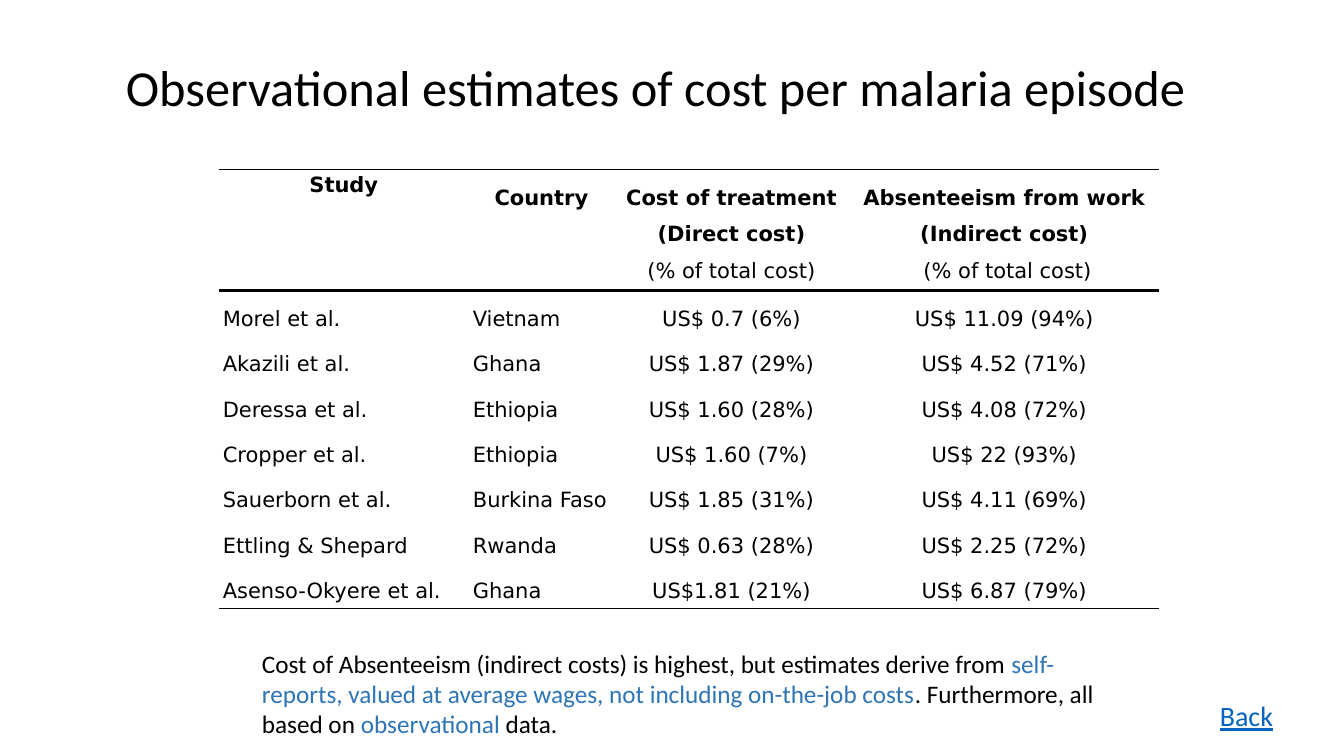
"""Build the slide on the cost of a malaria episode."""
from lxml.etree import SubElement
from pptx import Presentation
from pptx.dml.color import RGBColor
from pptx.enum.text import MSO_ANCHOR, MSO_AUTO_SIZE, PP_ALIGN
from pptx.oxml.ns import qn
from pptx.util import Inches, Pt

HUES = {"ink": "000000", "mark": "2E75B6", "link": "0563C1"}
HEAD = [
    ["Study"],
    ["Country"],
    ["Cost of treatment", "(Direct cost)", "(% of total cost)"],
    ["Absenteeism from work", "(Indirect cost)", " (% of total cost)"],
]
DATA = [
    ("Morel et al.", "Vietnam", "US$ 0.7 (6%)", "US$ 11.09 (94%)"),
    ("Akazili et al.", "Ghana", "US$ 1.87 (29%)", "US$ 4.52 (71%)"),
    ("Deressa et al.", "Ethiopia", "US$ 1.60 (28%)", "US$ 4.08 (72%)"),
    ("Cropper et al.", "Ethiopia", "US$ 1.60 (7%)", "US$ 22 (93%)"),
    ("Sauerborn et al.", "Burkina Faso", "US$ 1.85 (31%)", "US$ 4.11 (69%)"),
    ("Ettling & Shepard", "Rwanda", "US$ 0.63 (28%)", "US$ 2.25 (72%)"),
    ("Asenso-Okyere et al.", "Ghana", "US$1.81 (21%)", "US$ 6.87 (79%)"),
]
NOTE = [
    ("Cost of Absenteeism (indirect costs) is highest, but estimates derive from ", "ink"),
    ("self-reports, valued at average wages, not including on-the-job costs", "mark"),
    (". Furthermore, all based on ", "ink"),
    ("observational", "mark"),
    (" data.", "ink"),
]


class Deck:
    def __init__(self):
        self.show = Presentation()
        self.show.slide_width, self.show.slide_height = Inches(13.33), Inches(7.5)
        self.page = self.show.slides.add_slide(self.show.slide_layouts[5])

    def place(self, left, top, width, height):
        wide, high = self.show.slide_width, self.show.slide_height
        return [int(share * size / 100) for share, size in
                ((left, wide), (top, high), (width, wide), (height, high))]

    def style(self, font, size, face="Calibri", hue="ink", bold=False):
        font.size, font.name, font.bold = Pt(size), face, bold
        font.color.rgb = RGBColor.from_string(HUES[hue])

    def title(self, text, *area):
        shape = self.page.shapes.title
        shape.left, shape.top, shape.width, shape.height = self.place(*area)
        frame = shape.text_frame
        frame.text = text
        frame.margin_left = 0
        frame.vertical_anchor = MSO_ANCHOR.MIDDLE
        line = frame.paragraphs[0]
        line.alignment, line.line_spacing = PP_ALIGN.CENTER, 0.9
        self.style(line.font, 36)

    def text(self, parts, size, *area, wrap=True):
        frame = self.page.shapes.add_textbox(*self.place(*area)).text_frame
        frame.word_wrap = wrap
        frame.auto_size = MSO_AUTO_SIZE.SHAPE_TO_FIT_TEXT
        line = frame.paragraphs[0]
        for text, hue in parts:
            run = line.add_run()
            run.text = text
            self.style(run.font, size, hue=hue)
        return line

    def link(self, text, *area):
        line = self.text([(text, "link")], 20, *area, wrap=False)
        line.level = 1
        line.font.underline = True
        line.runs[0].font.underline = True

    def rule(self, cell, side, width):
        edge = SubElement(cell._tc.get_or_add_tcPr(), qn(f"a:ln{side}"), w=str(Pt(width)))
        if width:
            fill = SubElement(edge, qn("a:solidFill"))
            SubElement(fill, qn("a:srgbClr"), val=HUES["ink"])
        else:
            SubElement(edge, qn("a:noFill"))

    def cell(self, cell, lines, mid, head, rules):
        cell.text = "\n".join(lines)
        cell.margin_left = cell.margin_right = Inches(0.04)
        cell.margin_top = cell.margin_bottom = Inches(0.04)
        for rank, line in enumerate(cell.text_frame.paragraphs):
            line.alignment = PP_ALIGN.CENTER if mid else PP_ALIGN.LEFT
            line.line_spacing = 1.5
            self.style(line.font, 15, "DejaVu Sans", bold=head and rank < 2)
        for side, width in zip("LRTB", (0, 0, *rules)):
            self.rule(cell, side, width)
        cell.fill.background()

    def table(self, head, data, cols, rows, *area):
        left, top, width, height = self.place(*area)
        grid = self.page.shapes.add_table(len(rows), len(cols), left, top, width, height).table
        grid.first_row = grid.horz_banding = False
        for col, share in zip(grid.columns, cols):
            col.width = int(width * share / sum(cols))
        for row, share in zip(grid.rows, rows):
            row.height = int(height * share / sum(rows))
        full = [head] + [[[text] for text in row] for row in data]
        edges = [1, 2.25] + [0] * (len(data) - 1) + [1]
        for y, row in enumerate(full):
            for x, lines in enumerate(row):
                self.cell(grid.cell(y, x), lines, y == 0 or x > 1, y == 0, edges[y:y + 2])
        grid.cell(0, 0).text_frame.paragraphs[0].line_spacing = 1.0


def main():
    deck = Deck()
    deck.title("Observational estimates of cost per malaria episode", 4.2, 7.6, 89.95, 8.67)
    deck.table(HEAD, DATA, [2.48, 1.44, 2.33, 3.08], [8] + [3] * len(DATA),
               16.28, 22.4, 70, 58.13)
    deck.text(NOTE, 18, 18.75, 85.07, 64.37, 13.47)
    deck.link("Back", 86.27, 91.73, 9.3, 5.87)
    deck.show.save("out.pptx")


if __name__ == "__main__":
    main()
